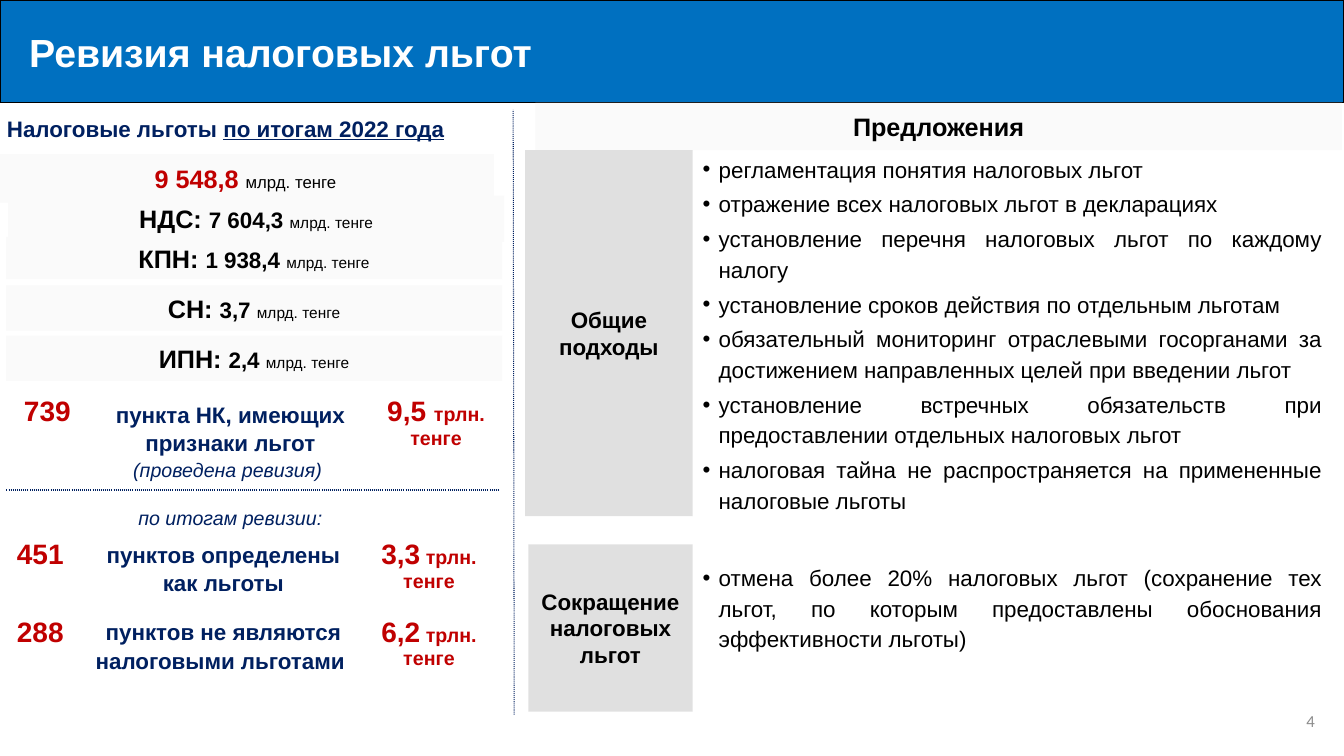
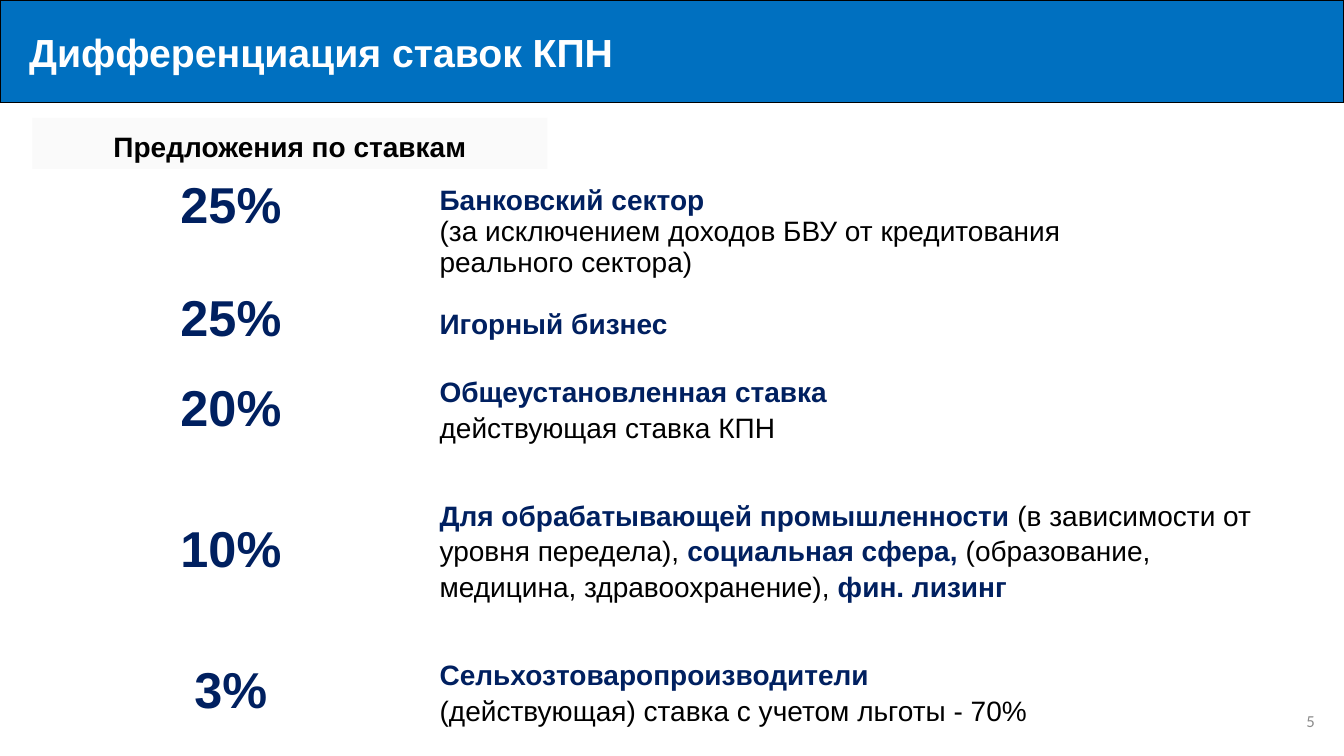
from lxml import etree
from pptx import Presentation
from pptx.dml.color import RGBColor
from pptx.enum.dml import MSO_LINE
from pptx.enum.shapes import MSO_CONNECTOR, MSO_SHAPE
from pptx.enum.text import MSO_ANCHOR, PP_ALIGN
from pptx.oxml import parse_xml
from pptx.oxml.ns import nsdecls, qn
from pptx.util import Inches, Pt

RECT, LINE, DOTS = MSO_SHAPE.RECTANGLE, MSO_CONNECTOR.STRAIGHT, MSO_LINE.ROUND_DOT
TOP, MID, LOW = MSO_ANCHOR.TOP, MSO_ANCHOR.MIDDLE, MSO_ANCHOR.BOTTOM
LEFT, MEAN, RIGHT, JUST = PP_ALIGN.LEFT, PP_ALIGN.CENTER, PP_ALIGN.RIGHT, PP_ALIGN.JUSTIFY
BLUE, NAVY, RED, BLACK, WHITE = "0070C0", "002060", "C00000", "000000", "FFFFFF"
PALE, GREY, DIM = "FAFAFA", "D9D9D9", "8C8C8C"
rgb = RGBColor.from_string


def write(frame, paras, align=LEFT, anchor=MID, lines=None, gap=None, face="Arial"):
    frame.word_wrap = True
    for i, runs in enumerate(paras):
        para = frame.add_paragraph() if i else frame.paragraphs[0]
        para.alignment = align
        if lines:
            para.line_spacing = lines
        if gap and i:
            para.space_before = Pt(gap)
        for text, size, color, style in runs:
            run = para.add_run()
            run.text = text
            font = run.font
            font.name, font.size, font.color.rgb = face, Pt(size), rgb(color)
            font.bold, font.italic, font.underline = "b" in style, "i" in style, "u" in style
    frame.vertical_anchor = anchor


def box(slide, place, paras, fill=None, **look):
    place = [Inches(n) for n in place]
    if fill:
        shape = slide.shapes.add_shape(RECT, *place)
        shape.shadow.inherit = False
        shape.fill.solid()
        shape.fill.fore_color.rgb = rgb(fill)
        shape.line.fill.background()
    else:
        shape = slide.shapes.add_textbox(*place)
    write(shape.text_frame, paras, **look)
    return shape


deck = Presentation()
deck.slide_width, deck.slide_height = Inches(13.33), Inches(7.5)
slides = []
for title in ("Ревизия налоговых льгот", "Дифференциация ставок КПН"):
    slide = deck.slides.add_slide(deck.slide_layouts[6])
    band = box(slide, (0, 0, 13.33, 1.02), [[(title, 28, WHITE, "b")]], BLUE)
    band.text_frame.margin_left = Inches(0.29)
    band.line.color.rgb = rgb(BLACK)
    band.line.width = Pt(1)
    slides.append(slide)
perks, rates = slides

head = box(perks, (-0.03, 1.09, 4.59, 0.37), [[
    ("Налоговые льготы ", 16, NAVY, "b"), ("по итогам 2022 года", 16, NAVY, "bu")]], anchor=TOP)
head.text_frame.word_wrap = False

unit = "млрд. тенге"
box(perks, (-0.03, 1.53, 4.93, 0.48),
    [[("9 548,8 ", 18, RED, "b"), (unit, 12, BLACK, "")]], PALE, align=MEAN)
for tax, total, left, top, high in (
    ("НДС: ", "7 604,3 ", 0.08, 1.94, 0.46),
    ("КПН: ", "1 938,4 ", 0.06, 2.35, 0.42),
    ("СН: ", "3,7 ", 0.06, 2.83, 0.45),
    ("ИПН: ", "2,4 ", 0.06, 3.33, 0.45),
):
    box(perks, (left, top, 4.92, high), [[
        (tax, 18, BLACK, "b"), (total, 16, BLACK, "b"), (unit, 11, BLACK, "")]], PALE, align=MEAN)

rule = perks.shapes.add_connector(LINE, Inches(5.1), Inches(7.09), Inches(5.09), Inches(1.09))
rule.line.color.rgb = rgb(NAVY)
rule.line.width = Pt(0.75)
rule.line.dash_style = DOTS
etree.SubElement(rule._element.spPr, qn("a:effectLst"))

box(perks, (5.31, 1.02, 8, 0.47), [[("Предложения", 18, BLACK, "b")]], PALE, align=MEAN)
box(rates, (0.32, 1.17, 5.11, 0.56), [[("Предложения по ставкам", 20, BLACK, "b")]], PALE, align=MEAN)

for name, tile, area, points in (
    ("Общие подходы", (5.21, 1.49, 1.66, 3.63), (6.87, 1.46, 6.34, 3.7), (
        "регламентация понятия налоговых льгот",
        "отражение всех налоговых льгот в декларациях",
        "установление перечня налоговых льгот по каждому налогу",
        "установление сроков действия по отдельным льготам",
        "обязательный мониторинг отраслевыми госорганами за достижением направленных целей при введении льгот",
        "установление встречных обязательств при предоставлении отдельных налоговых льгот",
        "налоговая тайна не распространяется на примененные налоговые льготы")),
    ("Сокращение налоговых льгот", (5.24, 5.4, 1.63, 1.66), (6.87, 5.51, 6.34, 1), (
        "отмена более 20% налоговых льгот (сохранение тех льгот, по которым предоставлены обоснования эффективности льготы)",)),
):
    label = box(perks, tile, [[(name, 16, BLACK, "b")]], GREY, align=MEAN)
    tint = label._element.spPr.find(qn("a:solidFill"))[0]
    etree.SubElement(tint, qn("a:alpha"), val="80000")
    body = box(perks, area, [[(point, 16, BLACK, "")] for point in points],
               align=JUST, anchor=TOP, lines=1.14, gap=3)
    for para in body.text_frame.paragraphs:
        props = para._p.get_or_add_pPr()
        props.set("marL", str(Inches(0.16)))
        props.set("indent", str(-Inches(0.16)))
        etree.SubElement(props, qn("a:buFont"), typeface="Arial")
        etree.SubElement(props, qn("a:buChar"), char="•")

thin = (0.8, 2.83, 1.25)
wide = (3.94, 8.58)
sides = (MEAN, MEAN, MEAN)
tables = [(perks, 0.07, 3.88, thin, (0.98, 0.44), sides, [
    [([[("739", 20, RED, "b")]], TOP, None),
     ([[("пункта НК, имеющих признаки льгот ", 16, NAVY, "b"),
        ("(проведена ревизия) ", 14, NAVY, "i")]], MID, 1.15),
     ([[("9,5 ", 20, RED, "b"), ("трлн. тенге", 14, RED, "b")]], TOP, None)],
    [([], TOP, None),
     ([[("по итогам ревизии:", 14, NAVY, "i")]], LOW, 1.15),
     ([], TOP, None)]])]
for count, text, total, top in (
    ("451", "пунктов определены как льготы", "3,3", 5.3),
    ("288", "пунктов не являются налоговыми льготами ", "6,2", 6.07),
):
    tables.append((perks, 0, top, thin, (0.71,), sides, [[
        ([[(count, 20, RED, "b")]], TOP, None),
        ([[(text, 16, NAVY, "b")]], TOP, 1.15),
        ([[(total, 20, RED, "b"), (" трлн. тенге", 14, RED, "b")]], TOP, None)]]))

offers = (
    (("25%", "25%"), None, [
        [("Банковский сектор", 20, NAVY, "b")],
        [("(за исключением доходов БВУ от кредитования", 20, BLACK, "")],
        [("реального сектора)", 20, BLACK, "")],
        [("Игорный бизнес", 20, NAVY, "b")]]),
    (("20%",), 1.15, [
        [("Общеустановленная ставка", 20, NAVY, "b")],
        [("действующая ставка КПН", 20, BLACK, "")]]),
    (("10%",), 1.15, [[
        ("Для обрабатывающей промышленности ", 20, NAVY, "b"),
        ("(в зависимости от уровня передела), ", 20, BLACK, ""),
        ("социальная сфера, ", 20, NAVY, "b"),
        ("(образование, медицина, здравоохранение),", 20, BLACK, ""),
        (" фин. лизинг", 20, NAVY, "b")]]),
    (("3%",), 1.15, [
        [("Сельхозтоваропроизводители", 20, NAVY, "b")],
        [("(действующая) ставка с учетом льготы - 70%", 20, BLACK, "")]]),
)
tables.append((rates, 0.32, 1.68, wide, (1.85, 1.05, 1.75, 1.05), (MEAN, LEFT), [
    [([[(rate, 36, NAVY, "b")] for rate in values], MID, None), (paras, MID, lines)]
    for values, lines, paras in offers]))

grids = []
for slide, left, top, cols, rows, aligns, cells in tables:
    frame = slide.shapes.add_table(len(rows), len(cols), Inches(left), Inches(top),
                                   Inches(sum(cols)), Inches(sum(rows)))
    grid = frame.table
    grid.first_row = grid.horz_banding = False
    for col, width in zip(grid.columns, cols):
        col.width = Inches(width)
    for r, high in enumerate(rows):
        grid.rows[r].height = Inches(high)
        for c, (paras, anchor, lines) in enumerate(cells[r]):
            cell = grid.cell(r, c)
            cell.fill.solid()
            cell.fill.fore_color.rgb = rgb(WHITE)
            write(cell.text_frame, paras, aligns[c], lines=lines)
            cell.vertical_anchor = anchor
    grids.append(grid)

for r, edge in enumerate(("lnB", "lnT")):
    for cell in grids[0].rows[r].cells:
        cell._tc.get_or_add_tcPr().insert(0, parse_xml(
            f'<a:{edge} {nsdecls("a")} w="{Pt(1.5)}"><a:solidFill><a:srgbClr val="{NAVY}"/>'
            f'</a:solidFill><a:prstDash val="sysDot"/></a:{edge}>'))

for c, gap in enumerate((40, 22)):
    grids[-1].cell(0, c).text_frame.paragraphs[-1].space_before = Pt(gap)

for page, slide in enumerate(slides, 4):
    box(slide, (10.14, 6.95, 3, 0.4), [[(str(page), 12, DIM, "")]], align=RIGHT, face="Calibri")

deck.save("out.pptx")
